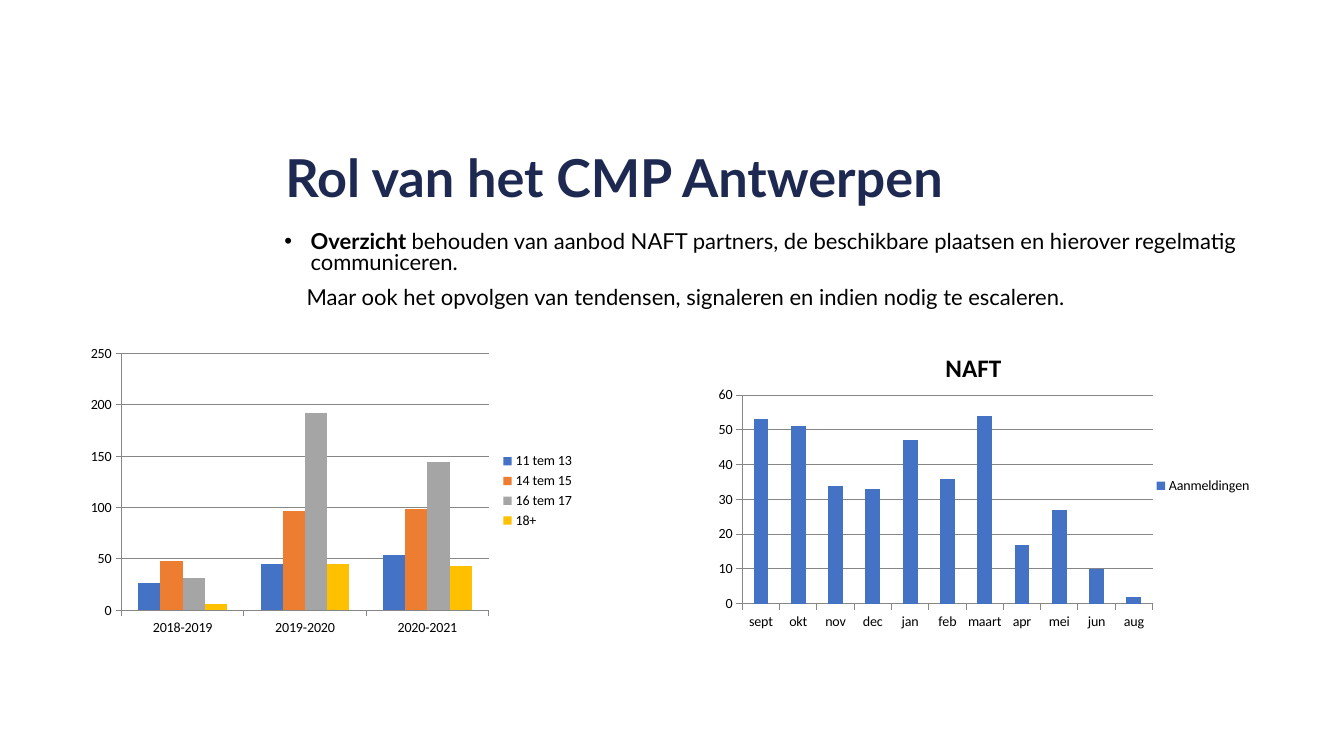
from dataclasses import dataclass

from lxml import etree
from pptx import Presentation
from pptx import util as u
from pptx.chart.data import CategoryChartData
from pptx.dml.color import RGBColor
from pptx.enum import chart as ch, text
from pptx.oxml import parse_xml
from pptx.oxml.ns import nsdecls, qn

COLORS = {
    "navy": "1D2951", "black": "000000", "axis": "868686",
    "blue": "4472C4", "orange": "ED7D31", "grey": "A5A5A5", "gold": "FFC000",
}
HEADING_FONT = "Lato"
CHART_FONT = "Calibri"


@dataclass
class Series:
    name: str
    values: list[int]
    color: str


@dataclass
class ColumnChart:
    box: tuple[float, float, float, float]
    categories: list[str]
    series: list[Series]
    title: str = ""
    number_format: str = "General"
    plot: tuple[float, float, float, float] | None = None


CHARTS = [
    ColumnChart(
        (0.8, 3.37, 5, 3),
        ["2018-2019", "2019-2020", "2020-2021"],
        [
            Series("11 tem 13", [27, 45, 54], "blue"),
            Series("14 tem 15", [48, 97, 99], "orange"),
            Series("16 tem 17", [31, 192, 144], "grey"),
            Series("18+", [6, 45, 43], "gold"),
        ],
    ),
    ColumnChart(
        (6.79, 3.32, 5.73, 3),
        ["sept", "okt", "nov", "dec", "jan", "feb", "maart", "apr", "mei", "jun", "aug"],
        [Series("Aanmeldingen", [53, 51, 34, 33, 47, 36, 54, 17, 27, 10, 2], "blue")],
        title="NAFT", number_format="#,##0", plot=(0.1, 0.2, 0.71, 0.69),
    ),
]


def rgb(name: str) -> RGBColor:
    return RGBColor.from_string(COLORS[name])


def style_font(font, size: float, name: str, color: str = "black", bold: bool = False) -> None:
    font.size, font.name, font.bold = u.Pt(size), name, bold
    font.color.rgb = rgb(color)


def place_frame(sp, box: tuple[float, float, float, float]):
    """Move a placeholder and return its text frame, without margins and top anchored."""
    sp.left, sp.top, sp.width, sp.height = map(u.Inches, box)
    tf = sp.text_frame
    tf.margin_left = tf.margin_top = tf.margin_right = tf.margin_bottom = 0
    tf.vertical_anchor = text.MSO_ANCHOR.TOP
    tf.auto_size = text.MSO_AUTO_SIZE.NONE
    tf.word_wrap = True
    return tf


def write_paragraph(p, runs: list[tuple[str, bool]], *, size: float, color: str = "black",
                    spacing: float = 0.8, before: float = 0, margin: float = 0,
                    bullet: str = "") -> None:
    p.alignment = text.PP_ALIGN.LEFT
    p.line_spacing = spacing
    p.space_before = u.Pt(before)
    pPr = p._p.get_or_add_pPr()
    pPr.set("marL", str(u.Inches(margin)))
    pPr.set("indent", str(-u.Inches(margin) if bullet else 0))
    if bullet:
        etree.SubElement(pPr, qn("a:buFont"), typeface="Arial")
        etree.SubElement(pPr, qn("a:buChar"), char=bullet)
    else:
        etree.SubElement(pPr, qn("a:buNone"))
    for words, bold in runs:
        r = p.add_run()
        r.text = words
        style_font(r.font, size, HEADING_FONT, color, bold)


def set_plot_layout(chart, plot: tuple[float, float, float, float]) -> None:
    """Fix the inner plot area as fractions of the chart: left, top, width, height."""
    area = chart._chartSpace.chart.plotArea
    for old in area.findall(qn("c:layout")):
        area.remove(old)
    parts = "".join(f'<c:{tag} val="{val}"/>' for tag, val in zip("xywh", plot))
    area.insert(0, parse_xml(
        f'<c:layout {nsdecls("c")}><c:manualLayout><c:layoutTarget val="inner"/>'
        f'<c:xMode val="edge"/><c:yMode val="edge"/>{parts}</c:manualLayout></c:layout>'))


def add_column_chart(s, spec_chart: ColumnChart) -> None:
    data = CategoryChartData(number_format=spec_chart.number_format)
    data.categories = spec_chart.categories
    for series in spec_chart.series:
        data.add_series(series.name, series.values)
    chart = s.shapes.add_chart(ch.XL_CHART_TYPE.COLUMN_CLUSTERED,
                               *map(u.Inches, spec_chart.box), data).chart
    style_font(chart.font, 10, CHART_FONT)

    chart.has_title = bool(spec_chart.title)
    if spec_chart.title:
        tf = chart.chart_title.text_frame
        tf.text = spec_chart.title
        style_font(tf.paragraphs[0].runs[0].font, 18, CHART_FONT, bold=True)
        chart.chart_title.include_in_layout = False
    chart.has_legend = True
    chart.legend.position = ch.XL_LEGEND_POSITION.RIGHT
    chart.legend.include_in_layout = False

    for axis in (chart.category_axis, chart.value_axis):
        axis.major_tick_mark = ch.XL_TICK_MARK.OUTSIDE
        axis.minor_tick_mark = ch.XL_TICK_MARK.NONE
        axis.format.line.color.rgb = rgb("axis")
    chart.value_axis.has_major_gridlines = True
    chart.value_axis.major_gridlines.format.line.color.rgb = rgb("axis")

    columns = chart.plots[0]
    columns.gap_width = 150
    columns.vary_by_categories = False
    for drawn, series in zip(columns.series, spec_chart.series):
        drawn.format.fill.solid()
        drawn.format.fill.fore_color.rgb = rgb(series.color)
    if spec_chart.plot:
        set_plot_layout(chart, spec_chart.plot)


def main() -> None:
    prs = Presentation()
    prs.slide_width, prs.slide_height = u.Inches(13.33), u.Inches(7.5)
    s = prs.slides.add_slide(prs.slide_layouts[1])

    tf = place_frame(s.shapes.title, (2.83, 1.51, 9.58, 0.7))
    write_paragraph(tf.paragraphs[0], [("Rol van het CMP Antwerpen", True)],
                    size=37.3, color="navy", spacing=0.9)

    tf = place_frame(s.placeholders[1], (2.82, 2.31, 9.67, 0.82))
    write_paragraph(tf.paragraphs[0], [
        ("Overzicht ", True),
        ("behouden van aanbod NAFT partners, de beschikbare plaatsen en hierover "
         "regelmatig communiceren.", False),
    ], size=15.7, margin=0.26, bullet="•")
    write_paragraph(tf.add_paragraph(), [
        ("Maar ook het opvolgen van tendensen, signaleren en indien nodig te escaleren.", False),
    ], size=15.7, before=10, margin=0.22)

    for column_chart in CHARTS:
        add_column_chart(s, column_chart)
    prs.save("out.pptx")


if __name__ == "__main__":
    main()
